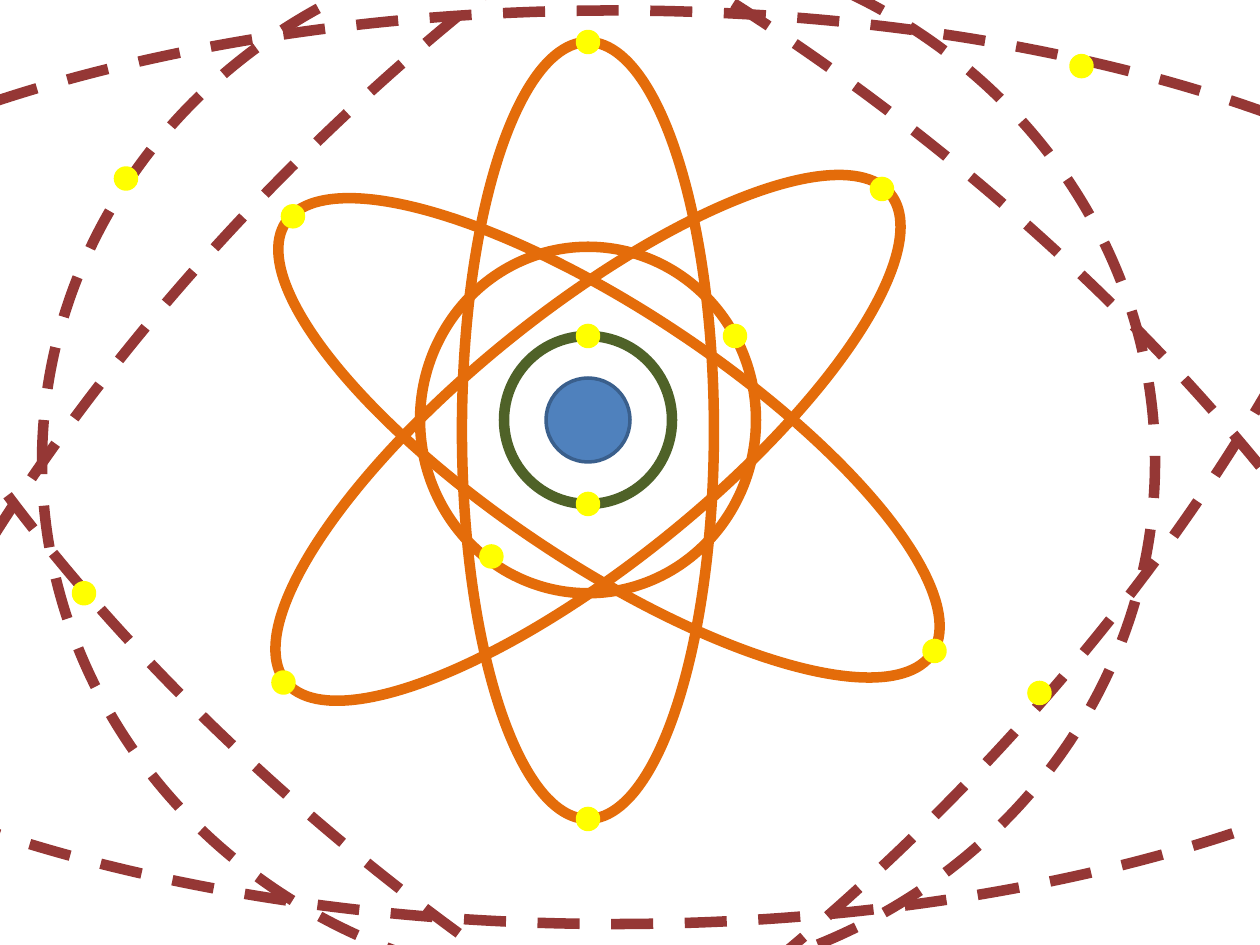
from pptx import Presentation
from pptx.dml.color import RGBColor
from pptx.enum.dml import MSO_LINE
from pptx.enum.shapes import MSO_SHAPE
from pptx.util import Inches, Pt

WIDTH, HEIGHT = Inches(10), Inches(7.5)
COLUMNS = 120
CELL = WIDTH / COLUMNS

BLUE = RGBColor(0x4F, 0x81, 0xBD)
DARK_BLUE = RGBColor(0x3A, 0x5F, 0x8C)
GREEN = RGBColor(0x4F, 0x62, 0x28)
ORANGE = RGBColor(0xE4, 0x6C, 0x0A)
MAROON = RGBColor(0x95, 0x37, 0x35)
YELLOW = RGBColor(0xFF, 0xFF, 0x00)

NUCLEUS = (56, 40)
INNER_ORBITS = [
    (NUCLEUS, (16, 16), 0, GREEN),
    (NUCLEUS, (32, 33), 0, ORANGE),
    ((56, 41), (24, 74), 0, ORANGE),
    ((56, 41.7), (24, 74), 51.1, ORANGE),
    ((58, 41.7), (24, 74), 303.7, ORANGE),
]
OUTER_ORBITS = [
    ((58.5, 44.5), (197, 87), 0),
    ((58.5, 46.7), (197, 87), 315),
    ((62.5, 48.5), (197, 87), 38.9),
    ((57, 44), (106, 100), 0),
]
ELECTRONS = [
    (56, 48), (56, 32),
    (70, 32), (46.8, 53),
    (56, 4), (56, 78),
    (84, 18), (27, 65),
    (27.9, 20.6), (89, 62),
    (103, 6.3), (99, 66), (8, 56.5), (12, 17),
]


def add_ellipse(s, center, size, color, weight):
    (x, y), (w, h) = center, size
    box = [round(n * CELL) for n in (x - w / 2, y - h / 2, w, h)]
    sp = s.shapes.add_shape(MSO_SHAPE.OVAL, *box)
    sp.shadow.inherit = False
    sp.line.color.rgb = color
    sp.line.width = Pt(weight)
    return sp


def add_ball(s, center, diameter, fill, outline):
    sp = add_ellipse(s, center, (diameter, diameter), outline, 2)
    sp.fill.solid()
    sp.fill.fore_color.rgb = fill


def add_orbit(s, center, size, tilt, color, dash=None):
    sp = add_ellipse(s, center, size, color, 6)
    sp.fill.background()
    sp.rotation = tilt
    if dash:
        sp.line.dash_style = dash


def main():
    prs = Presentation()
    prs.slide_width, prs.slide_height = WIDTH, HEIGHT
    s = prs.slides.add_slide(prs.slide_layouts[6])
    add_ball(s, NUCLEUS, 8, BLUE, DARK_BLUE)
    for center, size, tilt, color in INNER_ORBITS:
        add_orbit(s, center, size, tilt, color)
    for center, size, tilt in OUTER_ORBITS:
        add_orbit(s, center, size, tilt, MAROON, MSO_LINE.DASH)
    for center in ELECTRONS:
        add_ball(s, center, 2, YELLOW, YELLOW)
    prs.save("out.pptx")


if __name__ == "__main__":
    main()
